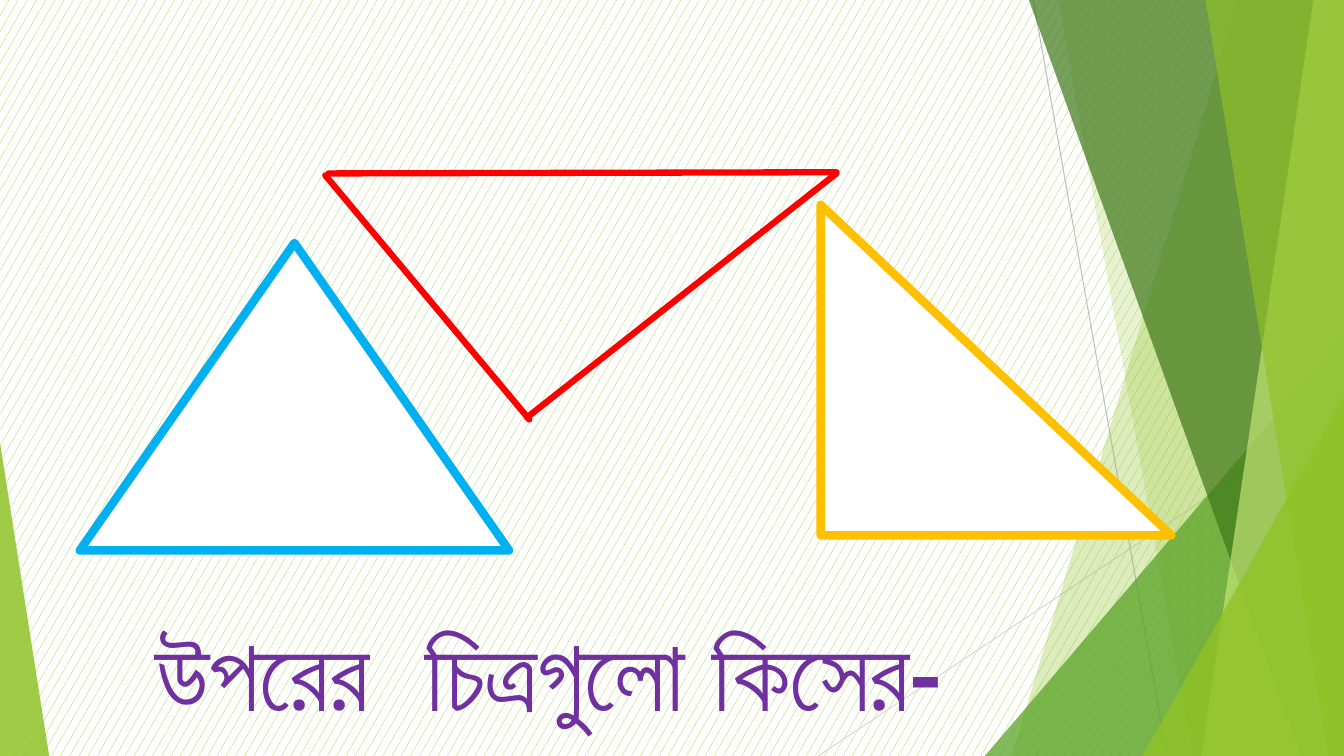
import dataclasses
import typing

import lxml.etree
import pptx
import pptx.dml.color
import pptx.dml.fill
import pptx.dml.line
import pptx.enum.dml
import pptx.enum.shapes
import pptx.enum.text
import pptx.oxml
import pptx.oxml.ns
import pptx.shapes.base
import pptx.slide
import pptx.util

Cm = pptx.util.Cm
SHAPE = pptx.enum.shapes.MSO_SHAPE
WIDTH, HEIGHT = 33.87, 19.05


@dataclasses.dataclass(frozen=True)
class Theme:
    lime: str = "90C226"
    green: str = "54A021"
    forest: str = "3F7819"
    pale: str = "C0E474"
    white: str = "FFFFFF"
    grey: str = "BFBFBF"
    light_grey: str = "D9D9D9"
    red: str = "FF0000"
    blue: str = "00B0F0"
    gold: str = "FFC000"
    purple: str = "7030A0"
    font: str = "Calibri"
    question_size: float = 72
    hairline: float = 0.75
    side_width: float = 4.5
    outline_width: float = 6


THEME = Theme()


@dataclasses.dataclass(frozen=True)
class Line:
    x1: float
    y1: float
    x2: float
    y2: float
    color: str
    width: float


@dataclasses.dataclass(frozen=True)
class Pane:
    top_x: float
    bottom_x: float
    color: str
    opacity: int


@dataclasses.dataclass(frozen=True)
class Corner:
    left: float
    top: float
    width: float
    apex: float
    color: str
    opacity: int


@dataclasses.dataclass(frozen=True)
class Triangle:
    kind: SHAPE
    left: float
    top: float
    width: float
    height: float
    color: str


Item = typing.Union[Line, Pane, Corner, Triangle]

ITEMS: list[Item] = [
    Line(26.04, 0, 29.41, HEIGHT, THEME.grey, THEME.hairline),
    Line(WIDTH, 10.24, 20.62, HEIGHT, THEME.light_grey, THEME.hairline),
    Pane(31.19, 25.5, THEME.lime, 30),
    Pane(26.67, 30.05, THEME.lime, 20),
    Corner(24.82, 8.46, 9.05, 1, THEME.green, 72),
    Pane(25.93, 32.79, THEME.forest, 70),
    Pane(33.1, 30.28, THEME.pale, 70),
    Pane(30.38, 33.48, THEME.lime, 65),
    Corner(28.8, 9.98, 5.07, 1, THEME.lime, 80),
    Corner(0, 11.15, 1.24, 0, THEME.lime, 85),
    Line(8.2, 4.42, 13.34, 10.57, THEME.red, THEME.side_width),
    Triangle(SHAPE.ISOSCELES_TRIANGLE, 2.01, 6.12, 10.82, 7.75, THEME.blue),
    Triangle(SHAPE.RIGHT_TRIANGLE, 20.68, 5.16, 8.84, 8.33, THEME.gold),
    Line(8.28, 4.37, 21.08, 4.34, THEME.red, THEME.side_width),
    Line(13.28, 10.52, 21.08, 4.37, THEME.red, THEME.side_width),
]


def rgb(color: str) -> pptx.dml.color.RGBColor:
    return pptx.dml.color.RGBColor.from_string(color)


def child(parent: lxml.etree.ElementBase, tag: str) -> lxml.etree.ElementBase:
    return lxml.etree.SubElement(parent, pptx.oxml.ns.qn(tag))


def set_fill(fill: pptx.dml.fill.FillFormat, color: str, opacity: int = 100) -> None:
    fill.solid()
    fill.fore_color.rgb = rgb(color)
    if opacity < 100:
        srgb = fill._xPr.find(".//" + pptx.oxml.ns.qn("a:srgbClr"))
        child(srgb, "a:alpha").set("val", str(opacity * 1000))


def set_line(line: pptx.dml.line.LineFormat, color: str, width: float) -> None:
    line.width = pptx.util.Pt(width)
    set_fill(line.fill, color)
    ln = line._get_or_add_ln()
    ln.set("cap", "rnd")
    child(ln, "a:round")


def draw_line(s: pptx.slide.Slide, item: Line) -> None:
    c = s.shapes.add_connector(
        pptx.enum.shapes.MSO_CONNECTOR.STRAIGHT,
        Cm(item.x1), Cm(item.y1), Cm(item.x2), Cm(item.y2),
    )
    set_line(c.line, item.color, item.width)
    child(c._element.spPr, "a:effectLst")


def paint_glass(sp: pptx.shapes.base.BaseShape, color: str, opacity: int) -> None:
    sp.shadow.inherit = False
    set_fill(sp.fill, color, opacity)
    sp.line.fill.background()


def draw_pane(s: pptx.slide.Slide, item: Pane) -> None:
    outline = s.shapes.build_freeform(Cm(item.top_x), 0)
    outline.add_line_segments([
        (Cm(WIDTH), 0),
        (Cm(WIDTH), Cm(HEIGHT)),
        (Cm(item.bottom_x), Cm(HEIGHT)),
    ])
    paint_glass(outline.convert_to_shape(), item.color, item.opacity)


def draw_corner(s: pptx.slide.Slide, item: Corner) -> None:
    sp = s.shapes.add_shape(
        SHAPE.ISOSCELES_TRIANGLE,
        Cm(item.left), Cm(item.top), Cm(item.width), Cm(HEIGHT - item.top),
    )
    sp.adjustments[0] = item.apex
    paint_glass(sp, item.color, item.opacity)


def draw_triangle(s: pptx.slide.Slide, item: Triangle) -> None:
    sp = s.shapes.add_shape(
        item.kind, Cm(item.left), Cm(item.top), Cm(item.width), Cm(item.height)
    )
    sp.shadow.inherit = False
    set_fill(sp.fill, THEME.white)
    set_line(sp.line, item.color, THEME.outline_width)


def draw_question(s: pptx.slide.Slide, text: str) -> None:
    tf = s.shapes.add_textbox(Cm(2.87), Cm(15.27), Cm(21.89), Cm(3.33)).text_frame
    tf.word_wrap = True
    tf.auto_size = pptx.enum.text.MSO_AUTO_SIZE.SHAPE_TO_FIT_TEXT
    p = tf.paragraphs[0]
    p.alignment = pptx.enum.text.PP_ALIGN.CENTER
    r = p.add_run()
    r.text = text
    r.font.name = THEME.font
    r.font.size = pptx.util.Pt(THEME.question_size)
    r.font.bold = True
    r.font.color.rgb = rgb(THEME.purple)


def main() -> None:
    prs = pptx.Presentation()
    prs.slide_width, prs.slide_height = Cm(WIDTH), Cm(HEIGHT)
    s = prs.slides.add_slide(prs.slide_layouts[6])
    fill = s.background.fill
    fill.patterned()
    fill.pattern = pptx.enum.dml.MSO_PATTERN.SMALL_CONFETTI
    fill.fore_color.rgb = rgb(THEME.lime)
    fill.back_color.rgb = rgb(THEME.white)
    draw = {Line: draw_line, Pane: draw_pane, Corner: draw_corner, Triangle: draw_triangle}
    for item in ITEMS:
        draw[type(item)](s, item)
    draw_question(s, "উপরের  চিত্রগুলো কিসের-")
    prs.save("out.pptx")


if __name__ == "__main__":
    main()
